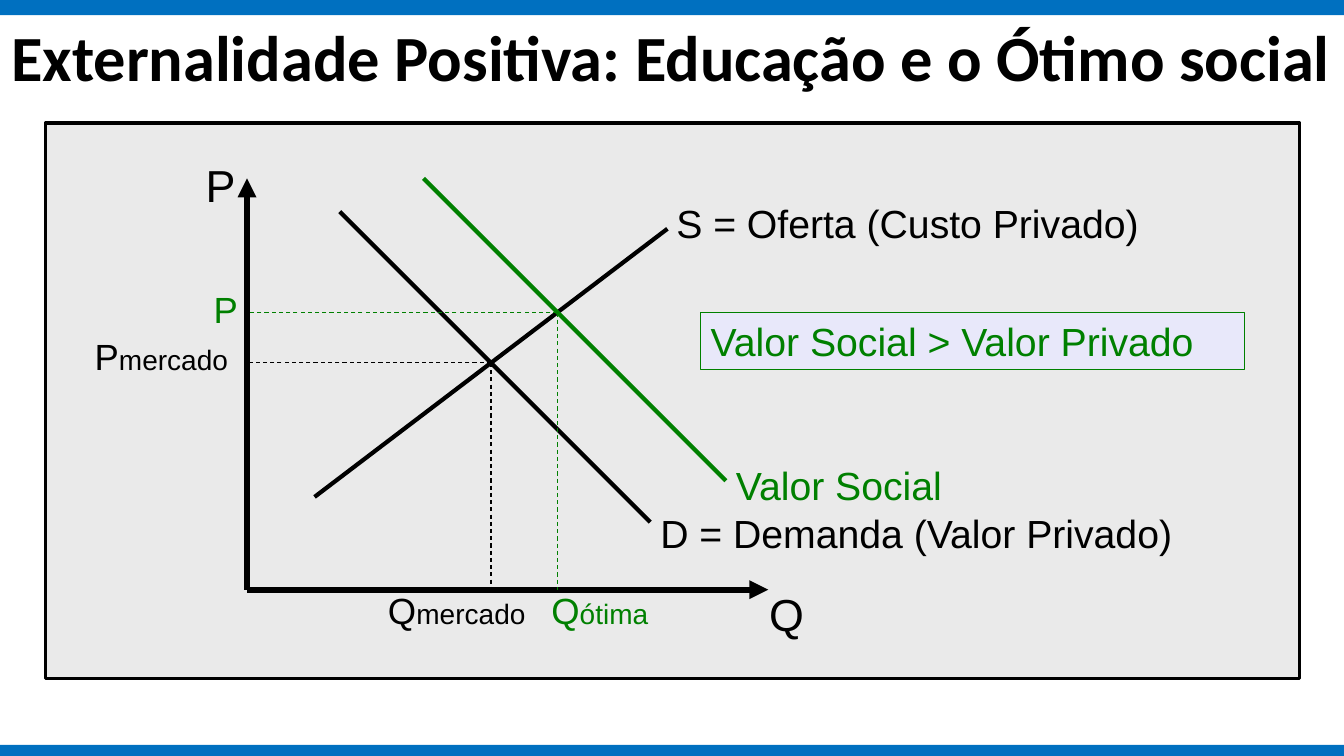
from lxml import etree
from pptx import Presentation
from pptx.dml.color import RGBColor
from pptx.enum.dml import MSO_LINE
from pptx.enum.shapes import MSO_CONNECTOR, MSO_SHAPE
from pptx.enum.text import MSO_ANCHOR, MSO_AUTO_SIZE, PP_ALIGN
from pptx.oxml.ns import qn
from pptx.util import Inches, Pt

RECTANGLE = MSO_SHAPE.RECTANGLE
STRAIGHT = MSO_CONNECTOR.STRAIGHT
DASH = MSO_LINE.DASH
LEFT = PP_ALIGN.LEFT
BOTTOM, TOP = MSO_ANCHOR.BOTTOM, MSO_ANCHOR.TOP
NO_AUTOFIT = MSO_AUTO_SIZE.NONE

COLORS = {"band": "0070C0", "panel": "EAEAEA", "note": "E8E8FA",
          "private": "000000", "social": "008000"}
TITLE_ONLY = 5


class SlideBuilder:
    """Holds the style and the current slide."""

    font = "Arial"
    title_font = "Calibri"

    def __init__(self, page):
        self.page = page

    def color(self, name):
        return RGBColor.from_string(COLORS[name])

    def add_text(self, shape, runs, color, font=None, bold=False, anchor=TOP):
        frame = shape.text_frame
        frame.word_wrap = True
        frame.auto_size = NO_AUTOFIT
        frame.vertical_anchor = anchor
        frame.margin_left = frame.margin_right = Inches(0.1)
        frame.margin_top = frame.margin_bottom = Inches(0.05)
        para = frame.paragraphs[0]
        para.alignment = LEFT
        for text, size in runs:
            span = para.add_run()
            span.text = text
            span.font.name = font or self.font
            span.font.size = Pt(size)
            span.font.bold = bold
            span.font.color.rgb = self.color(color)

    def title(self, text, left, top, width, height):
        box = self.page.shapes.title
        box.left, box.top = Inches(left), Inches(top)
        box.width, box.height = Inches(width), Inches(height)
        self.add_text(box, [(text, 46)], "private", self.title_font, True, BOTTOM)

    def rectangle(self, left, top, width, height, fill, line=None, weight=0.75):
        box = self.page.shapes.add_shape(RECTANGLE, Inches(left), Inches(top),
                                         Inches(width), Inches(height))
        box.shadow.inherit = False
        box.fill.solid()
        box.fill.fore_color.rgb = self.color(fill)
        if line:
            box.line.color.rgb = self.color(line)
            box.line.width = Pt(weight)
        else:
            box.line.fill.background()
        return box

    def label(self, runs, left, top, width, height, color):
        box = self.page.shapes.add_textbox(Inches(left), Inches(top),
                                           Inches(width), Inches(height))
        self.add_text(box, runs, color)

    def line(self, start, end, color, weight, dashed=False, arrow=False):
        link = self.page.shapes.add_connector(
            STRAIGHT, *(Inches(value) for value in (*start, *end)))
        link.line.color.rgb = self.color(color)
        link.line.width = Pt(weight)
        if dashed:
            link.line.dash_style = DASH
        properties = link.element.spPr
        if arrow:
            etree.SubElement(properties.find(qn("a:ln")), qn("a:tailEnd"),
                             type="triangle")
        etree.SubElement(properties, qn("a:effectLst"))


def main():
    deck = Presentation()
    deck.slide_width, deck.slide_height = Inches(13.33), Inches(7.5)
    builder = SlideBuilder(deck.slides.add_slide(deck.slide_layouts[TITLE_ONLY]))

    # Bands, panel and title
    builder.rectangle(0, -0.03, 13.33, 0.18, "band")
    builder.rectangle(0, 7.39, 13.33, 0.13, "band")
    builder.rectangle(0.45, 1.22, 12.44, 5.51, "panel", "private", 2.25)
    builder.title("Externalidade Positiva: Educação e o Ótimo social",
                  0.01, -0.18, 13.94, 1.17)

    # Axes
    origin_x, origin_y = 2.45, 5.85
    for axis_end in ((origin_x, 1.77), (7.62, origin_y)):
        builder.line((origin_x, origin_y), axis_end, "private", 4.5, arrow=True)

    # Demand, supply and social value curves
    for start, end, color in (
            ((3.37, 2.1), (6.45, 5.18), "private"),
            ((3.12, 4.93), (6.62, 2.27), "private"),
            ((4.2, 1.77), (7.2, 4.77), "social")):
        builder.line(start, end, color, 3)

    # Dashed guides from each equilibrium to both axes
    for x, y, color in ((4.87, 3.6, "private"), (5.53, 3.1, "social")):
        for foot in ((x, origin_y), (origin_x, y)):
            builder.line((x, y), foot, color, 0.75, dashed=True)

    # Axis, curve and equilibrium labels
    for runs, left, top, width, height, color in (
            ([("P", 32)], 1.94, 1.52, 0.58, 0.64, "private"),
            ([("Q", 32)], 7.53, 5.77, 0.58, 0.64, "private"),
            ([("S = Oferta (Custo Privado)", 28)], 6.61, 1.93, 5.1, 0.57, "private"),
            ([("D = Demanda (Valor Privado)", 28)], 6.45, 5, 5.65, 0.57, "private"),
            ([("Valor Social", 28)], 7.2, 4.53, 2.62, 0.57, "social"),
            ([("Q", 26), ("mercado", 20)], 3.75, 5.79, 1.87, 0.54, "private"),
            ([("P", 26), ("mercado", 20)], 0.84, 3.27, 1.8, 0.54, "private"),
            ([("Q", 26), ("ótima", 20)], 5.37, 5.79, 1.5, 0.54, "social"),
            ([("P", 26)], 2.02, 2.8, 1.5, 0.54, "social")):
        builder.label(runs, left, top, width, height, color)

    # Conclusion box
    note = builder.rectangle(6.95, 3.1, 5.39, 0.57, "note", "social")
    builder.add_text(note, [("Valor Social > Valor Privado", 28)], "social")

    deck.save("out.pptx")


if __name__ == "__main__":
    main()
